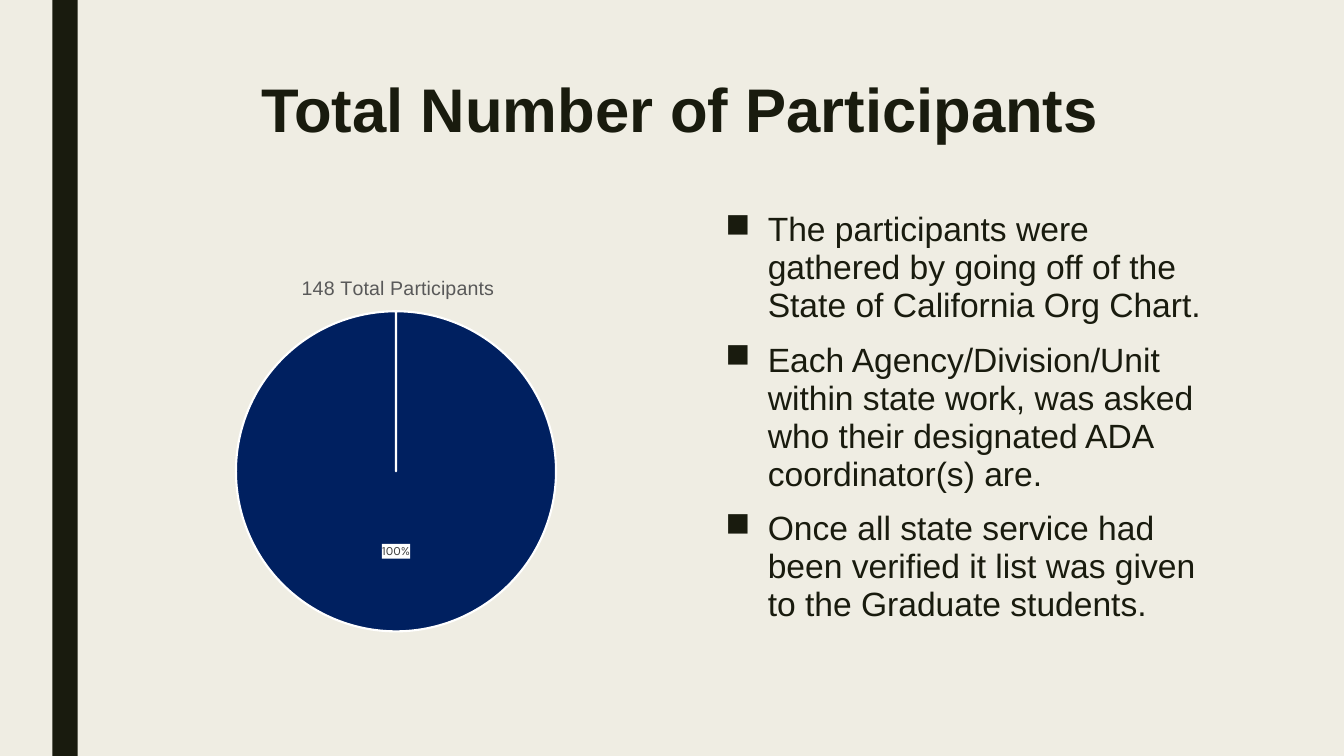
from lxml import etree
from pptx import Presentation
from pptx.chart import data
from pptx.dml import color
from pptx.enum import chart as ch, shapes, text
from pptx.oxml import ns
from pptx.util import Cm, Pt

INK, PAPER, NAVY, GREY, WHITE = "191B0E", "EFEDE3", "002060", "595959", "FFFFFF"
POINTS = [
    "The participants were gathered by going off of the State of California Org Chart.",
    "Each Agency/Division/Unit within state work, was asked who their designated ADA coordinator(s) are.",
    "Once all state service had been verified it list was given to the Graduate students.",
]


def paint(fill, value):
    """Give a fill one solid colour."""
    fill.solid()
    fill.fore_color.rgb = color.RGBColor.from_string(value)


def style(font, name, size, value, bold=False):
    """Set typeface, size, colour and weight."""
    font.name, font.size, font.bold = name, Pt(size), bold
    font.color.rgb = color.RGBColor.from_string(value)


def add_bar(s, x, y, w, h):
    """Add the dark side bar."""
    sp = s.shapes.add_shape(shapes.MSO_SHAPE.RECTANGLE, Cm(x), Cm(y), Cm(w), Cm(h))
    sp.shadow.inherit = False
    paint(sp.fill, INK)
    sp.line.fill.background()


def add_frame(s, x, y, w, h):
    """Add a wrapping text box and return its text frame."""
    tf = s.shapes.add_textbox(Cm(x), Cm(y), Cm(w), Cm(h)).text_frame
    tf.word_wrap = True
    return tf


def add_run(p, words, size, bold=False):
    """Add one run of slide text."""
    r = p.add_run()
    r.text = words
    style(r.font, "Arial", size, INK, bold)


def add_title(s, words):
    """Add the centred slide title."""
    p = add_frame(s, 3.81, 1.9, 26.67, 4.11).paragraphs[0]
    p.alignment = text.PP_ALIGN.CENTER
    p.line_spacing = 0.89
    add_run(p, words, 44, True)


def add_bullets(s, items):
    """Add the square-bulleted list."""
    tf = add_frame(s, 18.03, 5.21, 12.93, 12.22)
    for i, item in enumerate(items):
        p = tf.paragraphs[0] if i == 0 else tf.add_paragraph()
        p.line_spacing, p.space_before, p.space_after = 0.94, Pt(10), Pt(2)
        pPr = p._p.get_or_add_pPr()
        pPr.set("marL", str(Cm(1.07)))
        pPr.set("indent", str(Cm(-1.07)))
        etree.SubElement(pPr, ns.qn("a:buChar")).set("char", "■")
        add_run(p, item, 24)


def place(parent, index, **values):
    """Fix the place of a chart part as fractions of the chart."""
    for old in parent.findall(ns.qn("c:layout")):
        parent.remove(old)
    layout = etree.Element(ns.qn("c:layout"))
    manual = etree.SubElement(layout, ns.qn("c:manualLayout"))
    if "w" in values:
        etree.SubElement(manual, ns.qn("c:layoutTarget")).set("val", "inner")
    for mode in ("xMode", "yMode"):
        etree.SubElement(manual, ns.qn("c:" + mode)).set("val", "edge")
    for key, value in values.items():
        etree.SubElement(manual, ns.qn("c:" + key)).set("val", str(value))
    parent.insert(index, layout)


def add_labels(plot):
    """Show percentages on white in the middle of the slices."""
    plot.has_data_labels = True
    labels = plot.data_labels
    labels.show_percentage, labels.show_value = True, False
    labels.number_format, labels.number_format_is_linked = "0%", False
    labels.position = ch.XL_LABEL_POSITION.CENTER
    style(labels.font, "Karla", 9, "404040")
    spPr = etree.Element(ns.qn("c:spPr"))
    fill = etree.SubElement(spPr, ns.qn("a:solidFill"))
    etree.SubElement(fill, ns.qn("a:srgbClr")).set("val", WHITE)
    labels._element.find(ns.qn("c:txPr")).addprevious(spPr)


def add_pie(s, heading):
    """Add the participants pie chart."""
    cd = data.CategoryChartData()
    cd.categories = ["1"]
    cd.add_series("Series 1", [100])
    chart = s.shapes.add_chart(
        ch.XL_CHART_TYPE.PIE, Cm(3.81), Cm(6.35), Cm(12.34), Cm(9.96), cd).chart
    style(chart.font, "Karla", 10, "000000")
    chart.has_legend = False
    chart.has_title = True
    r = chart.chart_title.text_frame.paragraphs[0].add_run()
    r.text = heading
    style(r.font, "Arial", 14, GREY)
    place(chart.chart_title._element, 1, x=0.3, y=0.05)
    plot = chart.plots[0]
    plot.vary_by_categories = True
    place(plot._element.getparent(), 0, x=0.17, y=0.15, w=0.66, h=0.81)
    point = plot.series[0].points[0].format
    paint(point.fill, NAVY)
    paint(point.line.fill, WHITE)
    point.line.width = Pt(1.5)
    add_labels(plot)


def main():
    """Build and save the slide."""
    prs = Presentation()
    prs.slide_width, prs.slide_height = Cm(33.87), Cm(19.05)
    s = prs.slides.add_slide(prs.slide_layouts[6])
    paint(s.background.fill, PAPER)
    add_bar(s, 1.32, 0, 0.64, 19.05)
    add_title(s, "Total Number of Participants")
    add_pie(s, "148 Total Participants")
    add_bullets(s, POINTS)
    prs.save("out.pptx")


if __name__ == "__main__":
    main()
